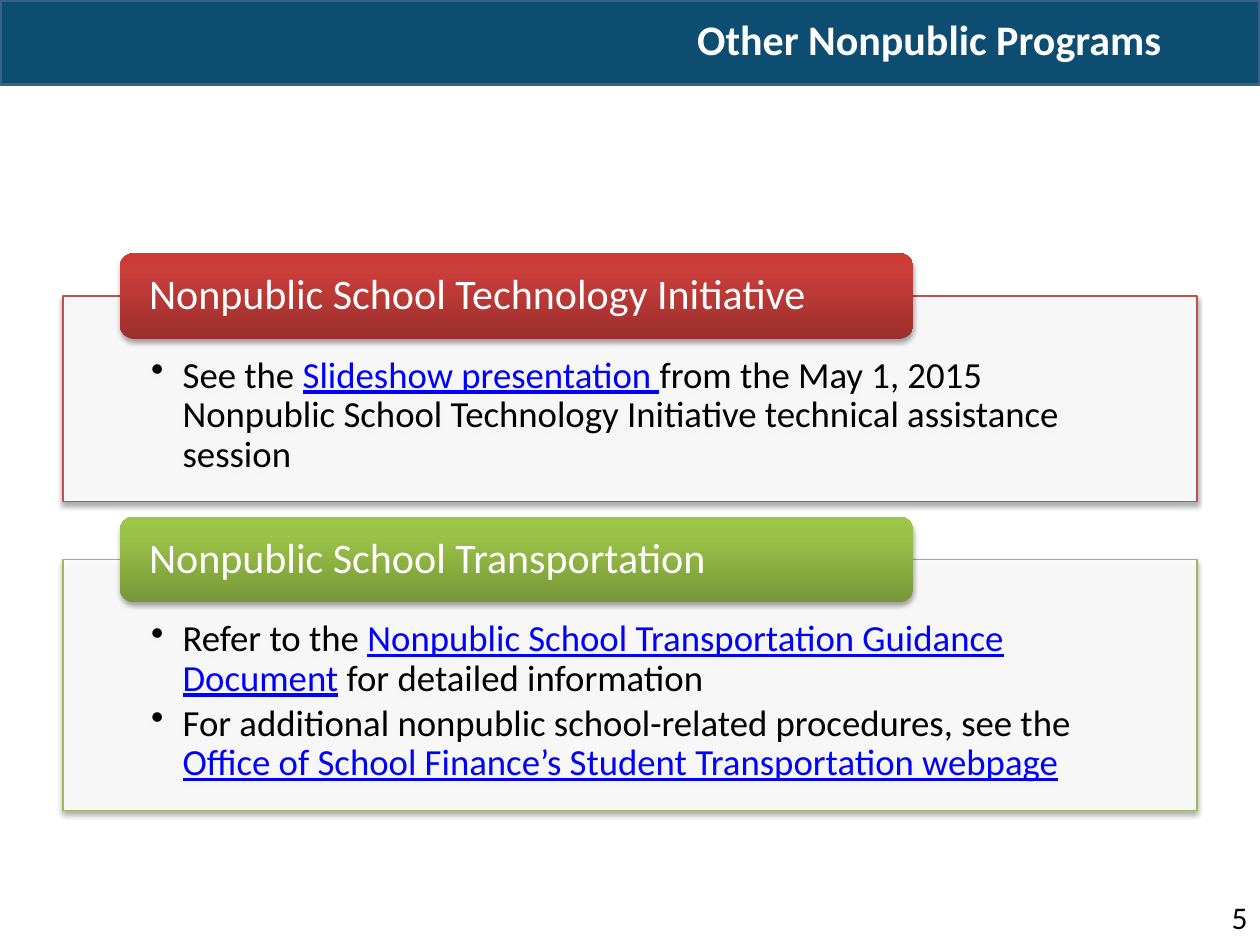
from lxml import etree
from pptx import Presentation
from pptx.dml.color import RGBColor
from pptx.enum.shapes import MSO_SHAPE as Preset
from pptx.enum.text import MSO_ANCHOR as Anchor, PP_ALIGN as Align
from pptx.oxml.ns import qn
from pptx.util import Inches, Pt

WHITE = RGBColor(0xFF, 0xFF, 0xFF)
BLACK = RGBColor(0x00, 0x00, 0x00)
LINK_BLUE = RGBColor(0x00, 0x00, 0xFF)
BANNER_FILL = RGBColor(0x0E, 0x4D, 0x72)
BANNER_LINE = RGBColor(0x3A, 0x5F, 0x8C)
RED = RGBColor(0xC0, 0x50, 0x4D)
GREEN = RGBColor(0x9B, 0xBB, 0x59)
RED_STOPS = [(0, RGBColor(0x9C, 0x2F, 0x2D)), (80, RGBColor(0xCB, 0x3E, 0x3A)), (100, RGBColor(0xCE, 0x3B, 0x37))]
GREEN_STOPS = [(0, RGBColor(0x77, 0x97, 0x37)), (80, RGBColor(0x9B, 0xC3, 0x48)), (100, RGBColor(0x9D, 0xC7, 0x46))]

FONT = "Calibri"
TITLE = "Other Nonpublic Programs"
PAGE_NUMBER = "5"
PROGRAMS = [
    {
        "heading": "Nonpublic School Technology Initiative",
        "line": RED, "stops": RED_STOPS, "height": 1.63,
        "bullets": [
            [("See the ", False), ("Slideshow presentation ", True),
             ("from the May 1, 2015 Nonpublic School Technology Initiative technical assistance session", False)],
        ],
    },
    {
        "heading": "Nonpublic School Transportation",
        "line": GREEN, "stops": GREEN_STOPS, "height": 1.99,
        "bullets": [
            [("Refer to the ", False), ("Nonpublic School Transportation Guidance Document", True),
             (" for detailed information", False)],
            [("For additional nonpublic school-related procedures, see the ", False),
             ("Office of School Finance’s Student Transportation webpage", True)],
        ],
    },
]
PANEL_LEFT, PANEL_WIDTH, FIRST_PANEL_TOP, PANEL_GAP = 0.5, 9, 2.35, 0.46
TAB_LEFT, TAB_WIDTH, TAB_HEIGHT = 0.95, 6.3, 0.68


def add_child(parent, tag, **attributes):
    return etree.SubElement(parent, qn(tag), attributes)


def add_shadow(shape):
    shape.shadow.inherit = False
    effects = shape._element.spPr.find(qn("a:effectLst"))
    shadow = add_child(effects, "a:outerShdw", blurRad=str(Pt(3.1)), dist=str(Pt(1.8)),
                       dir="5400000", rotWithShape="0")
    color = add_child(shadow, "a:srgbClr", val=str(BLACK))
    add_child(color, "a:alpha", val="35000")


def set_insets(frame, left, top, right, bottom):
    frame.margin_left, frame.margin_top = Inches(left), Inches(top)
    frame.margin_right, frame.margin_bottom = Inches(right), Inches(bottom)


def style_font(font, size, color, bold=False):
    font.name, font.size, font.bold = FONT, Pt(size), bold
    font.color.rgb = color


def add_label(slide, box, text, size, color, align, anchor, bold=False):
    frame = slide.shapes.add_textbox(*map(Inches, box)).text_frame
    frame.word_wrap = True
    frame.vertical_anchor = anchor
    frame.text = text
    paragraph = frame.paragraphs[0]
    paragraph.alignment = align
    style_font(paragraph.runs[0].font, size, color, bold)


def add_bullet(paragraph, runs):
    properties = paragraph._p.get_or_add_pPr()
    properties.set("marL", str(Inches(0.25)))
    properties.set("indent", str(Inches(-0.25)))
    paragraph.alignment = Align.LEFT
    paragraph.line_spacing = 0.9
    paragraph.space_after = Pt(3)
    add_child(properties, "a:buChar", char="•")
    for text, linked in runs:
        run = paragraph.add_run()
        run.text = text
        style_font(run.font, 21, LINK_BLUE if linked else BLACK)
        run.font.underline = linked


def add_panel(slide, program, top):
    panel = slide.shapes.add_shape(Preset.RECTANGLE, Inches(PANEL_LEFT), Inches(top),
                                   Inches(PANEL_WIDTH), Inches(program["height"]))
    panel.fill.solid()
    panel.fill.fore_color.rgb = WHITE
    fill_color = panel._element.spPr.find(qn("a:solidFill"))[0]
    add_child(fill_color, "a:alpha", val="90000")
    panel.line.color.rgb = program["line"]
    panel.line.width = Pt(0.75)
    add_shadow(panel)
    frame = panel.text_frame
    frame.word_wrap = True
    frame.vertical_anchor = Anchor.TOP
    set_insets(frame, 0.7, 0.48, 0.7, 0.16)
    for index, runs in enumerate(program["bullets"]):
        add_bullet(frame.add_paragraph() if index else frame.paragraphs[0], runs)


def add_tab(slide, program, panel_top):
    tab = slide.shapes.add_shape(Preset.ROUNDED_RECTANGLE, Inches(TAB_LEFT),
                                 Inches(panel_top - TAB_HEIGHT / 2),
                                 Inches(TAB_WIDTH), Inches(TAB_HEIGHT))
    tab.fill.gradient()
    tab.fill.gradient_angle = 90
    stop_list = tab._element.spPr.find(qn("a:gradFill")).find(qn("a:gsLst"))
    for stop in list(stop_list):
        stop_list.remove(stop)
    for position, color in program["stops"]:
        stop = add_child(stop_list, "a:gs", pos=str(position * 1000))
        add_child(stop, "a:srgbClr", val=str(color))
    tab.line.fill.background()
    add_shadow(tab)
    frame = tab.text_frame
    frame.word_wrap = True
    frame.vertical_anchor = Anchor.MIDDLE
    set_insets(frame, 0.2, 0, 0.2, 0)
    frame.text = program["heading"]
    paragraph = frame.paragraphs[0]
    paragraph.alignment = Align.LEFT
    paragraph.line_spacing = 0.9
    style_font(paragraph.runs[0].font, 24, WHITE)


def main():
    presentation = Presentation()
    presentation.slide_width, presentation.slide_height = Inches(10), Inches(7.5)
    slide = presentation.slides.add_slide(presentation.slide_layouts[6])

    banner = slide.shapes.add_shape(Preset.RECTANGLE, 0, 0, Inches(10), Inches(0.67))
    banner.shadow.inherit = False
    banner.fill.solid()
    banner.fill.fore_color.rgb = BANNER_FILL
    banner.line.color.rgb = BANNER_LINE
    banner.line.width = Pt(2)
    add_label(slide, (9.33, 7.08, 0.67, 0.4), PAGE_NUMBER, 18, BLACK, Align.RIGHT, Anchor.TOP)
    add_label(slide, (4.75, 0, 5.25, 0.62), TITLE, 24, WHITE, Align.CENTER, Anchor.MIDDLE, bold=True)

    top = FIRST_PANEL_TOP
    for program in PROGRAMS:
        add_panel(slide, program, top)
        add_tab(slide, program, top)
        top += program["height"] + PANEL_GAP

    presentation.save("out.pptx")


if __name__ == "__main__":
    main()
